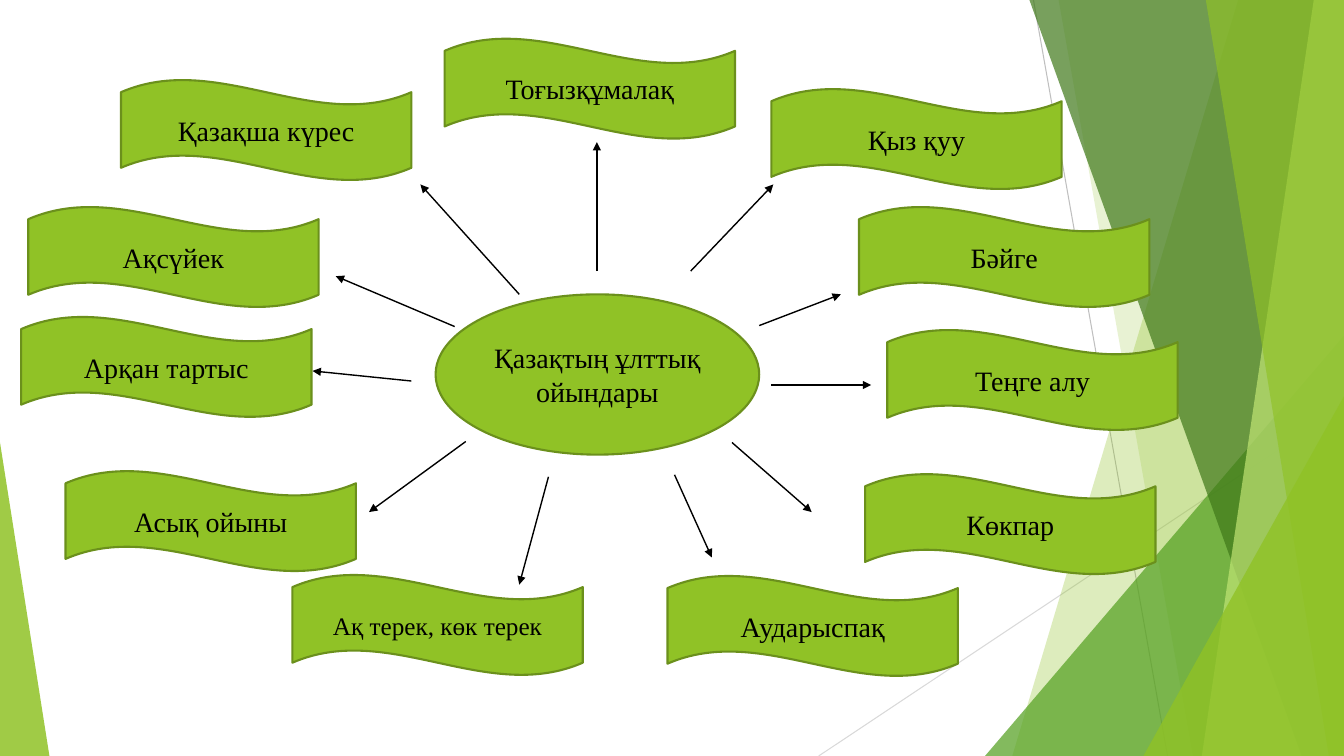
from lxml.etree import SubElement as Sub
from pptx import Presentation
from pptx.dml.color import RGBColor
from pptx.enum.shapes import MSO_CONNECTOR as Link, MSO_SHAPE as Kind
from pptx.enum.text import MSO_ANCHOR as Anchor, PP_ALIGN as Align
from pptx.oxml.ns import qn
from pptx.util import Inches, Pt

WIDE, HIGH = 13.33, 7.5
GREEN, EDGE, BLACK = "90C226", "6B901C", "000000"
FONT = {"name": "Times New Roman", "size": Pt(20)}
WAVE = (2.88, 1)

# Top and bottom x of the slanted left edge, colour, opacity
BACK = [(12.28, 10.04, GREEN, 30), (10.5, 11.83, GREEN, 20)]
FRONT = [(10.21, 12.91, "3F7819", 70), (13.03, 11.92, "C0E474", 70),
         (11.96, 13.18, GREEN, 65)]

# Name, left and top of the wave, start and end of its arrow
GAMES = [
    ("Тоғызқұмалақ", (4.41, 0.38), (5.92, 2.69), (5.92, 1.41)),
    ("Қыз қуу", (7.65, 0.88), (6.85, 2.69), (7.67, 1.83)),
    ("Бәйге", (8.52, 2.05), (7.53, 3.23), (8.34, 2.92)),
    ("Теңге алу", (8.8, 3.27), (7.65, 3.82), (8.64, 3.82)),
    ("Көкпар", (8.58, 4.7), (7.26, 4.39), (8.05, 5.08)),
    ("Аударыспақ", (6.62, 5.71), (6.69, 4.71), (7.06, 5.53)),
    ("Ақ терек, көк терек", (2.9, 5.7), (5.44, 4.73), (5.15, 5.8)),
    ("Асық ойыны", (0.65, 4.67), (4.62, 4.38), (3.66, 5.08)),
    ("Арқан тартыс", (0.21, 3.14), (4.08, 3.78), (3.1, 3.68)),
    ("Ақсүйек", (0.28, 2.05), (4.51, 3.24), (3.33, 2.74)),
    ("Қазақша күрес", (1.2, 0.79), (5.15, 2.92), (4.17, 1.83)),
]
SMALL = {"Ақ терек, көк терек": Pt(18)}


def rgb(code):
    return RGBColor.from_string(code)


def paint(shape, code, alpha=100):
    """Fill a shape, with opacity in percent."""
    shape.shadow.inherit = False
    shape.fill.solid()
    shape.fill.fore_color.rgb = rgb(code)
    if alpha < 100:
        tone = shape._element.spPr.find(qn("a:solidFill"))[0]
        Sub(tone, qn("a:alpha"), val=str(alpha * 1000))


def line(slide, start, end, code, width, arrow=False):
    link = slide.shapes.add_connector(
        Link.STRAIGHT, *(Inches(n) for n in (*start, *end)))
    link.line.color.rgb = rgb(code)
    link.line.width = Pt(width)
    if arrow:
        Sub(link.line._get_or_add_ln(), qn("a:tailEnd"), type="triangle")
    Sub(link._element.spPr, qn("a:effectLst"))


def wedge(slide, box, tip, code, alpha):
    """Right triangle; tip is the place of its apex from 0 to 1."""
    shape = slide.shapes.add_shape(
        Kind.ISOSCELES_TRIANGLE, *(Inches(n) for n in box))
    shape.adjustments[0] = tip
    paint(shape, code, alpha)
    shape.line.fill.background()


def blade(slide, box, upper, lower, code, alpha):
    """Band from a slanted edge to the right side of the box."""
    x, y, w, h = box
    points = [(x + w, y), (x + w, y + h), (x + lower, y + h)]
    form = slide.shapes.build_freeform(Inches(x + upper), Inches(y))
    form.add_line_segments([(Inches(a), Inches(b)) for a, b in points])
    shape = form.convert_to_shape()
    paint(shape, code, alpha)
    shape.line.fill.background()


def label(slide, kind, box, text, size=FONT["size"]):
    shape = slide.shapes.add_shape(kind, *(Inches(n) for n in box))
    paint(shape, GREEN)
    shape.line.color.rgb = rgb(EDGE)
    shape.line.width = Pt(1.5)
    shape.text_frame.word_wrap = True
    shape.text_frame.vertical_anchor = Anchor.MIDDLE
    para = shape.text_frame.paragraphs[0]
    para.alignment = Align.CENTER
    run = para.add_run()
    run.text = text
    for key, value in {**FONT, "size": size}.items():
        setattr(run.font, key, value)
    run.font.color.rgb = rgb(BLACK)


def facets(slide, box):
    """Green facets along the sides of the box."""
    x, y, w, h = box
    right, base = x + w, y + h
    line(slide, (x + 10.25, y), (x + 11.58, base), "BFBFBF", 0.75)
    line(slide, (right, y + 4.03), (x + 8.12, base), "D9D9D9", 0.75)
    for item in BACK:
        blade(slide, box, *item)
    wedge(slide, (right - 3.56, base - 4.17, 3.56, 4.17), 1, "54A021", 72)
    for item in FRONT:
        blade(slide, box, *item)
    wedge(slide, (right - 1.99, base - 3.57, 1.99, 3.57), 1, GREEN, 80)
    wedge(slide, (x, base - 3.11, 0.49, 3.11), 0, GREEN, 85)


def web(slide, box):
    """Central topic with arrows to the games around it."""
    x, y = box[:2]

    def move(point):
        return x + point[0], y + point[1]

    label(slide, Kind.OVAL, (*move((4.32, 2.92)), 3.21, 1.59),
          "Қазақтың ұлттық ойындары")
    for name, spot, start, end in GAMES:
        label(slide, Kind.WAVE, (*move(spot), *WAVE), name,
              SMALL.get(name, FONT["size"]))
    for name, spot, start, end in GAMES:
        line(slide, move(start), move(end), BLACK, 1, arrow=True)


def main():
    deck = Presentation()
    deck.slide_width, deck.slide_height = Inches(WIDE), Inches(HIGH)
    slide = deck.slides.add_slide(deck.slide_layouts[6])
    page = (0, 0, WIDE, HIGH)
    facets(slide, page)
    web(slide, page)
    deck.save("out.pptx")


if __name__ == "__main__":
    main()
